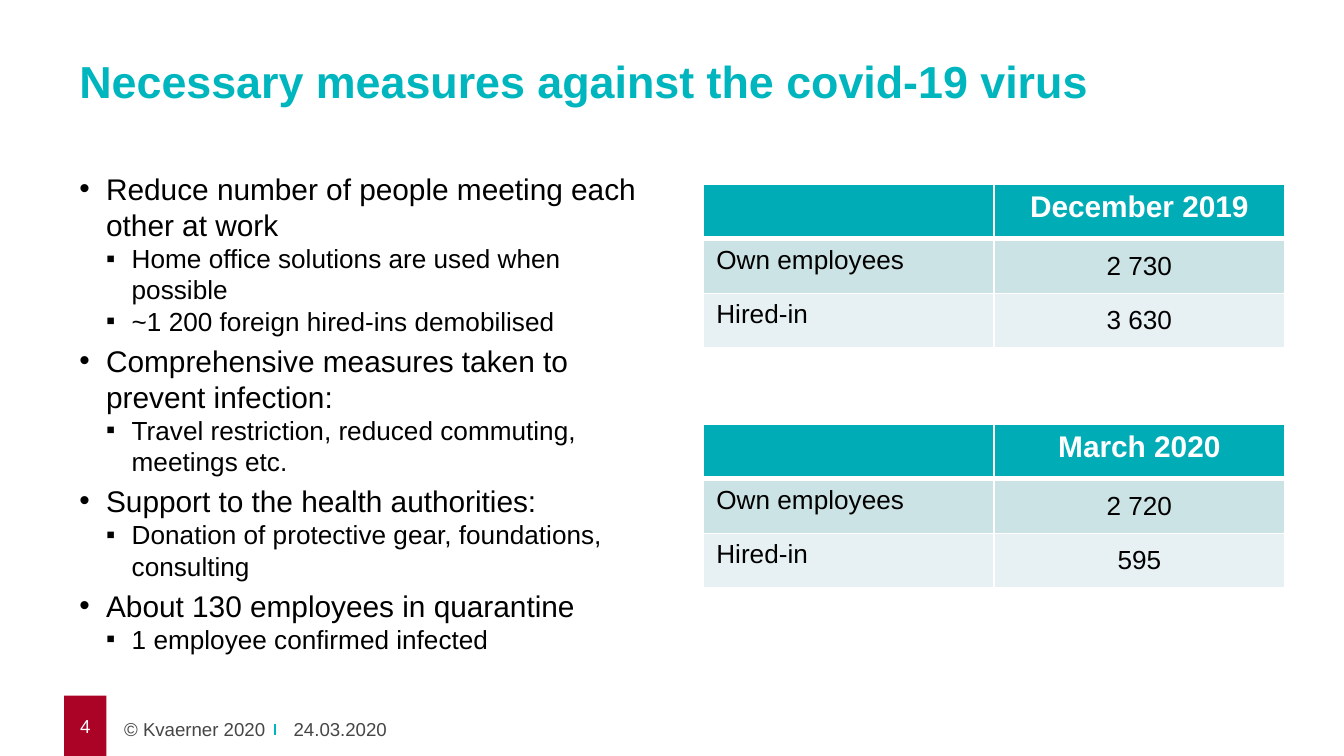
import lxml.etree
import pptx
import pptx.dml.color
import pptx.enum.shapes
import pptx.enum.text
import pptx.oxml
import pptx.oxml.ns
import pptx.util

COLORS = {
    "teal": "00B6BE",
    "header": "00ACB6",
    "band_dark": "CCE3E5",
    "band_light": "E7F1F3",
    "red": "AB0325",
    "grey": "464646",
    "black": "000000",
    "white": "FFFFFF",
}
ALIGN = pptx.enum.text.PP_ALIGN
ANCHOR = pptx.enum.text.MSO_ANCHOR
CELL = 0.1
COLUMNS, ROWS = 100, 56.25
BULLETS = [("•", 16, 0.2, 0.2), ("▪", 14, 0.39, 0.19)]

MEASURES = [
    (0, "Reduce number of people meeting each other at work"),
    (1, "Home office solutions are used when possible"),
    (1, "~1 200 foreign hired-ins demobilised"),
    (0, "Comprehensive measures taken to prevent infection:"),
    (1, "Travel restriction, reduced commuting, meetings etc."),
    (0, "Support to the health authorities:"),
    (1, "Donation of protective gear, foundations, consulting"),
    (0, "About 130 employees in quarantine"),
    (1, "1 employee confirmed infected"),
]
HEADCOUNTS = [
    (13.7, "December 2019", "2 730", "3 630"),
    (31.57, "March 2020", "2 720", "595"),
]


def grid(*lengths):
    return [pptx.util.Inches(length * CELL) for length in lengths]


def rgb(name):
    return pptx.dml.color.RGBColor.from_string(COLORS[name])


class SlideBuilder:
    font_name = "Arial"

    def __init__(self, presentation):
        self.slide = presentation.slides.add_slide(presentation.slide_layouts[5])

    def format(self, paragraph, size, color, bold=False, align=ALIGN.LEFT):
        paragraph.alignment = align
        for run in paragraph.runs:
            run.font.name = self.font_name
            run.font.size = pptx.util.Pt(size)
            run.font.bold = bold
            run.font.color.rgb = rgb(color)

    def frame(self, shape, anchor, insets=(0, 0, 0, 0)):
        text_frame = shape.text_frame
        text_frame.word_wrap = True
        text_frame.auto_size = pptx.enum.text.MSO_AUTO_SIZE.NONE
        text_frame.vertical_anchor = anchor
        (text_frame.margin_left, text_frame.margin_top,
         text_frame.margin_right, text_frame.margin_bottom) = grid(*insets)
        return text_frame

    def title(self, text, *box):
        shape = self.slide.shapes.title
        shape.left, shape.top, shape.width, shape.height = grid(*box)
        text_frame = self.frame(shape, ANCHOR.BOTTOM)
        text_frame.text = text
        self.format(text_frame.paragraphs[0], 24, "teal", bold=True)

    def label(self, text, box, anchor, insets, align=ALIGN.LEFT):
        shape = self.slide.shapes.add_textbox(*grid(*box))
        text_frame = self.frame(shape, anchor, insets)
        text_frame.text = text
        self.format(text_frame.paragraphs[0], 10, "grey", align=align)

    def badge(self, text, *box):
        shape = self.slide.shapes.add_shape(
            pptx.enum.shapes.MSO_SHAPE.RECTANGLE, *grid(*box))
        shape.shadow.inherit = False
        shape.fill.solid()
        shape.fill.fore_color.rgb = rgb("red")
        shape.line.fill.background()
        text_frame = self.frame(shape, ANCHOR.MIDDLE)
        text_frame.text = text
        self.format(text_frame.paragraphs[0], 10, "white", align=ALIGN.CENTER)

    def divider(self, *ends):
        connector = self.slide.shapes.add_connector(
            pptx.enum.shapes.MSO_CONNECTOR.STRAIGHT, *grid(*ends))
        connector.line.color.rgb = rgb("teal")
        connector.line.width = pptx.util.Pt(0.75)
        lxml.etree.SubElement(
            connector._element.spPr, pptx.oxml.ns.qn("a:effectLst"))

    def bullets(self, items, *box):
        shape = self.slide.shapes.add_textbox(*grid(*box))
        text_frame = self.frame(shape, ANCHOR.TOP)
        text_frame.text = "\n".join(text for _, text in items)
        for index, (level, _) in enumerate(items):
            paragraph = text_frame.paragraphs[index]
            character, size, indent, hanging = BULLETS[level]
            properties = paragraph._p.get_or_add_pPr()
            properties.set("marL", str(pptx.util.Inches(indent)))
            properties.set("indent", str(-pptx.util.Inches(hanging)))
            font = lxml.etree.SubElement(properties, pptx.oxml.ns.qn("a:buFont"))
            font.set("typeface", self.font_name)
            bullet = lxml.etree.SubElement(properties, pptx.oxml.ns.qn("a:buChar"))
            bullet.set("char", character)
            paragraph.level = level
            paragraph.space_before = pptx.util.Pt(3.2 if index and level == 0 else 0)
            self.format(paragraph, size, "black")

    def borders(self, cell, widths):
        properties = cell._tc.get_or_add_tcPr()
        for index, (side, width) in enumerate(widths.items()):
            properties.insert(index, pptx.oxml.parse_xml(
                f'<a:ln{side} {pptx.oxml.ns.nsdecls("a")} w="{pptx.util.Pt(width)}">'
                f'<a:solidFill><a:srgbClr val="{COLORS["white"]}"/></a:solidFill>'
                f'</a:ln{side}>'))

    def table(self, rows, *box):
        table = self.slide.shapes.add_table(len(rows), 2, *grid(*box)).table
        fills = ["header", "band_dark", "band_light"]
        for row, texts in enumerate(rows):
            header = row == 0
            for column, text in enumerate(texts):
                cell = table.cell(row, column)
                cell.text = text
                numeric = column == 1
                if numeric and not header:
                    cell.vertical_anchor = ANCHOR.MIDDLE
                self.format(
                    cell.text_frame.paragraphs[0],
                    16 if header else 14,
                    "white" if header else "black",
                    bold=header,
                    align=ALIGN.CENTER if numeric else ALIGN.LEFT)
                cell.fill.solid()
                cell.fill.fore_color.rgb = rgb(fills[row])
                self.borders(cell, {"L": 1, "R": 1, "T": 3 if row == 1 else 1,
                                    "B": 3 if header else 1})


def main():
    presentation = pptx.Presentation()
    presentation.slide_width, presentation.slide_height = grid(COLUMNS, ROWS)
    builder = SlideBuilder(presentation)
    builder.title("Necessary measures against the covid-19 virus", 5.9, 1.53, 88.2, 6.5)
    builder.label("© Kvaerner 2020", (-4.5, 52.9, 25.2, 2.7),
                  ANCHOR.TOP, (1, 0.5, 1, 0.5), ALIGN.RIGHT)
    builder.divider(20.47, 53.9, 20.47, 54.7)
    builder.label("24.03.2020", (20.87, 53.9, 9.4, 1.2), ANCHOR.BOTTOM, (1, 0, 0, 0))
    builder.badge("4", 4.77, 51.75, 3.15, 4.5)
    builder.bullets(MEASURES, 5.9, 12.7, 43.3, 39.6)
    for top, month, own, hired in HEADCOUNTS:
        rows = [("", month), ("Own employees", own), ("Hired-in", hired)]
        builder.table(rows, 52.3, top, 43.3, 12.2)
    presentation.save("out.pptx")


if __name__ == "__main__":
    main()
